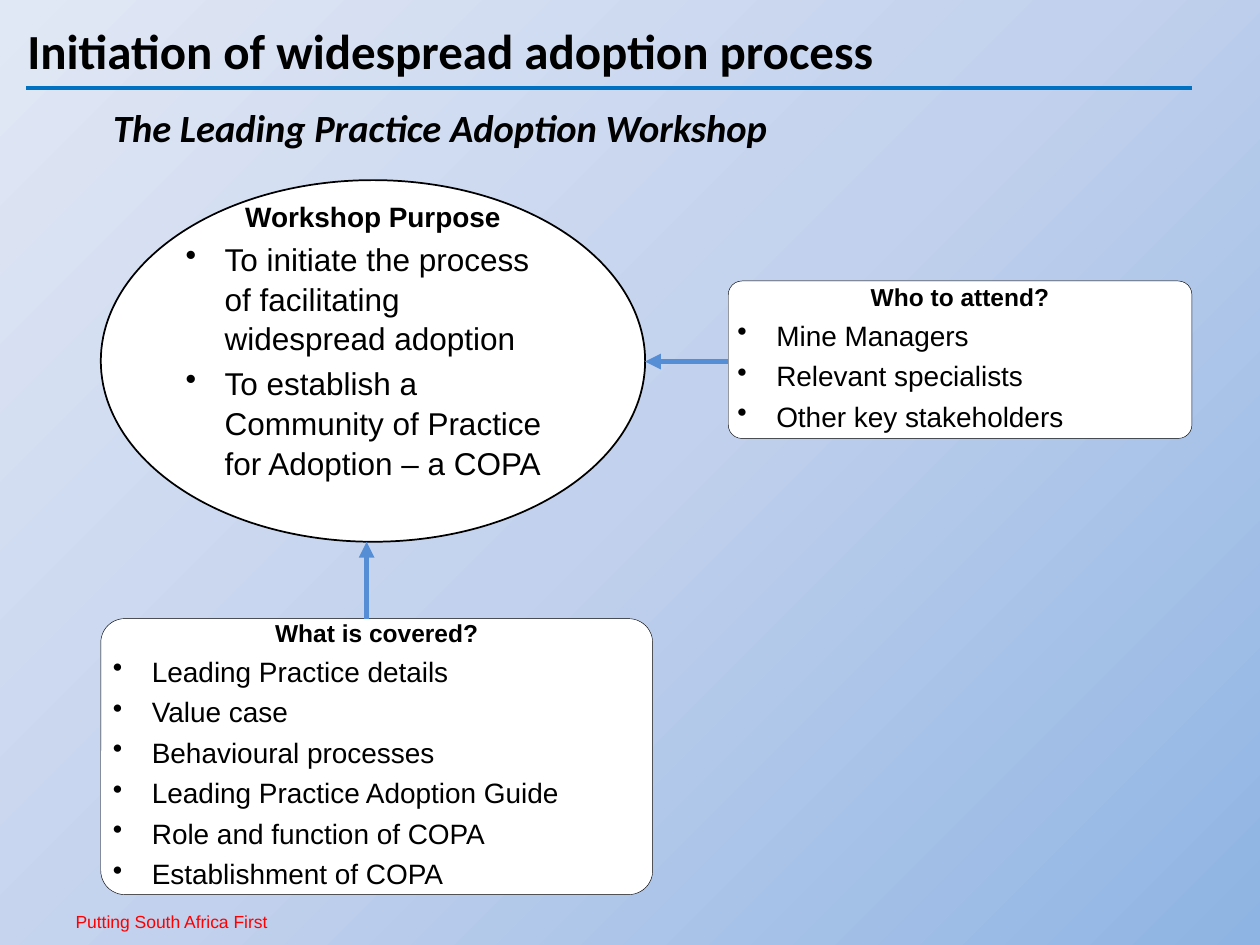
from lxml.etree import SubElement
from pptx import Presentation
from pptx.dml.color import RGBColor
from pptx.enum.shapes import MSO_CONNECTOR, MSO_SHAPE
from pptx.enum.text import MSO_ANCHOR, PP_ALIGN
from pptx.oxml import parse_xml
from pptx.oxml.ns import nsdecls, qn
from pptx.util import Inches, Pt

BLACK = RGBColor(0x00, 0x00, 0x00)
WHITE = RGBColor(0xFF, 0xFF, 0xFF)
RED = RGBColor(0xFF, 0x00, 0x00)
RULE_BLUE = RGBColor(0x00, 0x70, 0xC0)
ARROW_BLUE = RGBColor(0x55, 0x8E, 0xD5)
BACKGROUND = [(0, RGBColor(0x8E, 0xB4, 0xE3)),
              (50, RGBColor(0xC2, 0xD1, 0xED)),
              (100, RGBColor(0xE1, 0xE8, 0xF5))]


def add_text(p, text, size=16, font="Arial", color=BLACK, bold=False,
             italic=False, align=PP_ALIGN.LEFT, bullet=False):
    """Write one formatted run into paragraph p."""
    p.alignment = align
    if bullet:
        pPr = p._p.get_or_add_pPr()
        pPr.set("marL", str(Inches(0.31)))
        pPr.set("indent", str(-Inches(0.31)))
        SubElement(pPr, qn("a:buChar"), char="•")
    r = p.add_run()
    r.text = text
    r.font.size = Pt(size)
    r.font.name = font
    r.font.color.rgb = color
    r.font.bold = bold
    r.font.italic = italic


class SlideBuilder:
    margin = Inches(0.04)
    space_before = Pt(3)
    line_spacing = 1.05

    def __init__(self, slide):
        self.s = slide

    def background(self, stops):
        gs = "".join(f'<a:gs pos="{pos * 1000}"><a:srgbClr val="{color}"/></a:gs>'
                     for pos, color in stops)
        self.s.element.cSld.insert(0, parse_xml(
            f'<p:bg {nsdecls("p", "a")}><p:bgPr><a:gradFill rotWithShape="1">'
            f'<a:gsLst>{gs}</a:gsLst><a:path path="circle">'
            '<a:fillToRect l="100000" t="100000"/></a:path></a:gradFill>'
            '<a:effectLst/></p:bgPr></p:bg>'))

    def label(self, x, y, w, h, text, inset=None, **style):
        tf = self.s.shapes.add_textbox(
            Inches(x), Inches(y), Inches(w), Inches(h)).text_frame
        tf.word_wrap = True
        if inset is not None:
            tf.margin_left = tf.margin_right = inset
            tf.margin_top = tf.margin_bottom = inset
        add_text(tf.paragraphs[0], text, **style)

    def panel(self, kind, x, y, w, h, heading, items, heading_size=14,
              item_size=16, line_width=0.25, radius=None, top=0, bottom=0.05):
        sp = self.s.shapes.add_shape(
            kind, Inches(x), Inches(y), Inches(w), Inches(h))
        sp.shadow.inherit = False
        if radius is not None:
            sp.adjustments[0] = radius
        sp.fill.solid()
        sp.fill.fore_color.rgb = WHITE
        sp.line.color.rgb = BLACK
        sp.line.width = Pt(line_width)
        tf = sp.text_frame
        tf.word_wrap = True
        tf.vertical_anchor = MSO_ANCHOR.MIDDLE
        tf.margin_left = tf.margin_right = self.margin
        tf.margin_top, tf.margin_bottom = Inches(top), Inches(bottom)
        p = tf.paragraphs[0]
        add_text(p, heading, size=heading_size, bold=True, align=PP_ALIGN.CENTER)
        p.line_spacing = self.line_spacing
        for item in items:
            p = tf.add_paragraph()
            add_text(p, item, size=item_size, bullet=True)
            p.space_before = self.space_before
            p.line_spacing = self.line_spacing

    def line(self, x1, y1, x2, y2, color, width, arrow=False):
        c = self.s.shapes.add_connector(
            MSO_CONNECTOR.STRAIGHT, Inches(x1), Inches(y1), Inches(x2), Inches(y2))
        c.line.color.rgb = color
        c.line.width = Pt(width)
        if arrow:
            SubElement(c.line._get_or_add_ln(), qn("a:tailEnd"), type="triangle")
        SubElement(c._element.spPr, qn("a:effectLst"))


def main():
    prs = Presentation()
    prs.slide_width, prs.slide_height = Inches(10), Inches(7.5)
    b = SlideBuilder(prs.slides.add_slide(prs.slide_layouts[6]))
    b.background(BACKGROUND)

    # Footer, title and rule
    b.label(0.56, 7.19, 1.69, 0.25, "Putting South Africa First",
            inset=b.margin, size=10, color=RED)
    b.label(0.12, 0.11, 7.13, 0.57, "Initiation of widespread adoption process",
            size=28, font="Calibri", bold=True)
    b.line(0.21, 0.7, 9.46, 0.7, RULE_BLUE, 2.25)

    # Attendance and content boxes
    b.panel(MSO_SHAPE.ROUNDED_RECTANGLE, 5.78, 2.23, 3.68, 1.25,
            "Who to attend?",
            ["Mine Managers", "Relevant specialists", "Other key stakeholders"],
            radius=0.087)
    b.panel(MSO_SHAPE.ROUNDED_RECTANGLE, 0.8, 4.91, 4.38, 2.19,
            "What is covered?",
            ["Leading Practice details", "Value case", "Behavioural processes",
             "Leading Practice Adoption Guide", "Role and function of COPA",
             "Establishment of COPA"],
            radius=0.087)

    # Purpose ellipse
    b.panel(MSO_SHAPE.OVAL, 0.8, 1.43, 4.32, 2.87, "Workshop Purpose",
            ["To initiate the process of facilitating widespread adoption",
             "To establish a Community of Practice for Adoption – a COPA"],
            heading_size=16, item_size=18, line_width=1, top=0.04, bottom=0.38)

    # Arrows into the ellipse
    b.line(2.91, 4.91, 2.91, 4.3, ARROW_BLUE, 3, arrow=True)
    b.line(5.78, 2.87, 5.12, 2.87, ARROW_BLUE, 3, arrow=True)

    # Subtitle
    b.label(0.8, 0.78, 5.83, 0.47, "The Leading Practice Adoption Workshop",
            size=22, font="Calibri", bold=True, italic=True)

    prs.save("out.pptx")


if __name__ == "__main__":
    main()
